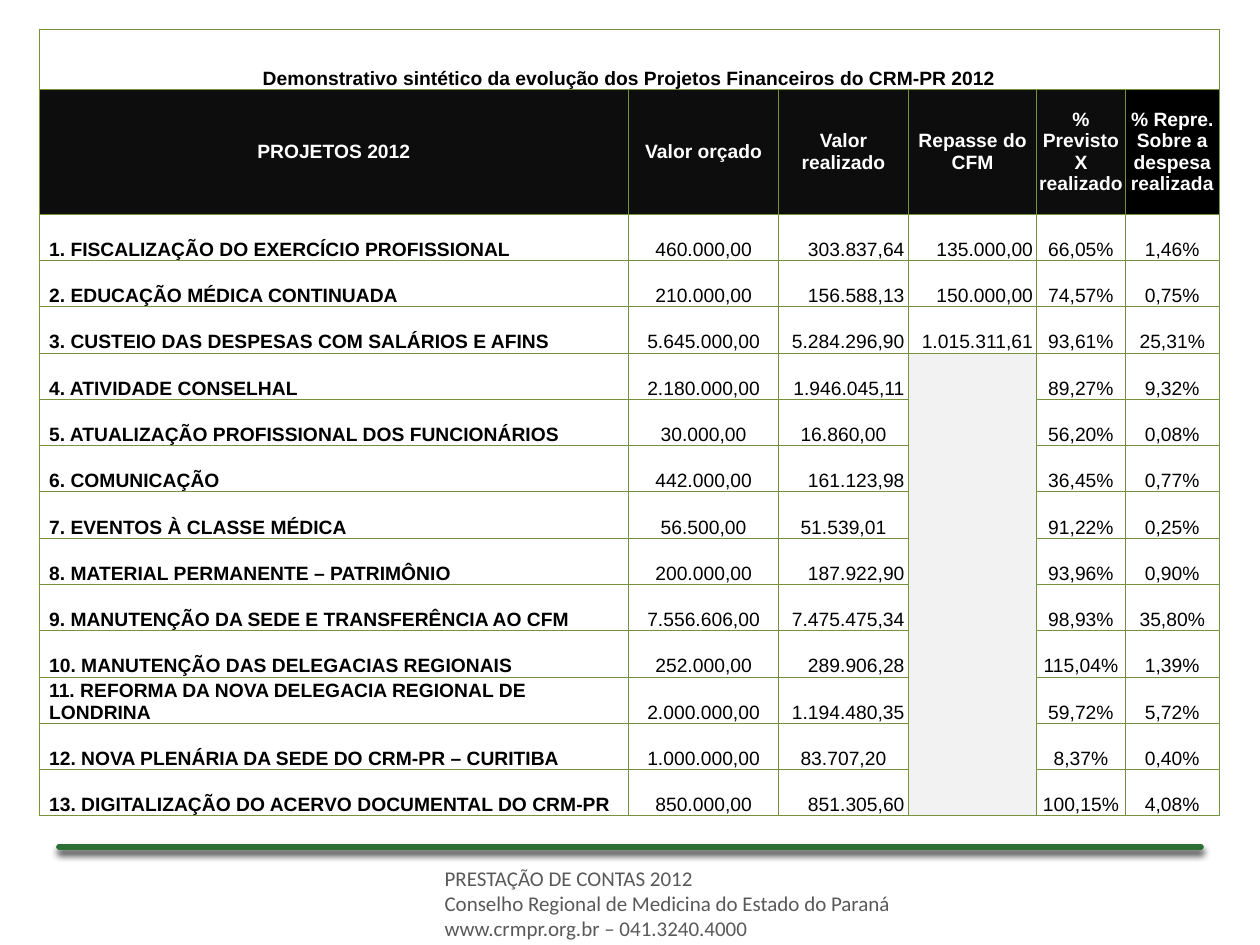
from lxml.etree import SubElement
from pptx import Presentation
from pptx.dml.color import RGBColor
from pptx.enum.shapes import MSO_CONNECTOR
from pptx.enum.text import MSO_ANCHOR, PP_ALIGN
from pptx.oxml.ns import qn
from pptx.util import Inches, Pt

BLACK = RGBColor(0x00, 0x00, 0x00)
WHITE = RGBColor(0xFF, 0xFF, 0xFF)
HEADER = RGBColor(0x0D, 0x0D, 0x0D)
EMPTY = RGBColor(0xF2, 0xF2, 0xF2)
BORDER = RGBColor(0x75, 0x92, 0x3C)
RULE = RGBColor(0x2C, 0x6E, 0x34)
GREY = RGBColor(0x59, 0x59, 0x59)

TITLE = "Demonstrativo sintético da evolução dos Projetos Financeiros do CRM-PR 2012"
HEADINGS = ["PROJETOS 2012", "Valor orçado", "Valor realizado", "Repasse do CFM",
            "% Previsto X realizado", "% Repre. Sobre a despesa realizada"]
PROJECTS = [
    ("1. FISCALIZAÇÃO DO EXERCÍCIO PROFISSIONAL", "460.000,00", "303.837,64", "135.000,00", "66,05%", "1,46%"),
    ("2. EDUCAÇÃO MÉDICA CONTINUADA", "210.000,00", "156.588,13", "150.000,00", "74,57%", "0,75%"),
    ("3. CUSTEIO DAS DESPESAS COM SALÁRIOS E AFINS", "5.645.000,00", "5.284.296,90", "1.015.311,61", "93,61%", "25,31%"),
    ("4. ATIVIDADE CONSELHAL", "2.180.000,00", "1.946.045,11", "", "89,27%", "9,32%"),
    ("5. ATUALIZAÇÃO PROFISSIONAL DOS FUNCIONÁRIOS", "30.000,00", "16.860,00", "", "56,20%", "0,08%"),
    ("6. COMUNICAÇÃO", "442.000,00", "161.123,98", "", "36,45%", "0,77%"),
    ("7. EVENTOS À CLASSE MÉDICA", "56.500,00", "51.539,01", "", "91,22%", "0,25%"),
    ("8. MATERIAL PERMANENTE – PATRIMÔNIO", "200.000,00", "187.922,90", "", "93,96%", "0,90%"),
    ("9. MANUTENÇÃO DA SEDE E TRANSFERÊNCIA AO CFM", "7.556.606,00", "7.475.475,34", "", "98,93%", "35,80%"),
    ("10. MANUTENÇÃO DAS DELEGACIAS REGIONAIS", "252.000,00", "289.906,28", "", "115,04%", "1,39%"),
    ("11. REFORMA DA NOVA DELEGACIA REGIONAL DE LONDRINA", "2.000.000,00", "1.194.480,35", "", "59,72%", "5,72%"),
    ("12. NOVA PLENÁRIA DA SEDE DO CRM-PR – CURITIBA", "1.000.000,00", "83.707,20", "", "8,37%", "0,40%"),
    ("13. DIGITALIZAÇÃO DO ACERVO DOCUMENTAL DO CRM-PR", "850.000,00", "851.305,60", "", "100,15%", "4,08%"),
]
COLUMN_WIDTHS = [4.68, 1.19, 1.03, 1.02, 0.7, 0.75]
TITLE_HEIGHT = Inches(0.48)
HEADING_HEIGHT = Inches(0.99)
TRANSFER_COLUMN = 3
FIRST_EMPTY_ROW = 5
FOOTER = ["PRESTAÇÃO DE CONTAS 2012",
          "Conselho Regional de Medicina do Estado do Paraná",
          "www.crmpr.org.br – 041.3240.4000"]


def set_values(target, values):
    for name, value in values.items():
        setattr(target, name, value)


def write(paragraph, text, size, font, color, bold=False):
    span = paragraph.add_run()
    span.text = text
    set_values(span.font, {"size": Pt(size), "name": font, "bold": bold})
    span.font.color.rgb = color


def add_borders(cell):
    properties = cell._tc.get_or_add_tcPr()
    for position, side in enumerate(("a:lnL", "a:lnR", "a:lnT", "a:lnB")):
        line = SubElement(properties, qn(side), w=str(Pt(0.5)))
        fill = SubElement(line, qn("a:solidFill"))
        SubElement(fill, qn("a:srgbClr"), val=str(BORDER))
        properties.insert(position, line)


def fill_cell(cell, text, fill=WHITE, color=BLACK, bold=False,
              align=PP_ALIGN.CENTER, anchor=MSO_ANCHOR.BOTTOM, left=0, right=0):
    set_values(cell, {"margin_left": Inches(left), "margin_right": Inches(right),
                      "margin_top": 0, "margin_bottom": 0, "vertical_anchor": anchor})
    cell.fill.solid()
    cell.fill.fore_color.rgb = fill
    add_borders(cell)
    paragraph = cell.text_frame.paragraphs[0]
    paragraph.alignment = align
    if text:
        write(paragraph, text, 11, "Arial", color, bold)


def project_format(column, text):
    if column == 0:
        return {"bold": True, "align": PP_ALIGN.LEFT, "left": 0.08}
    if column == TRANSFER_COLUMN and not text:
        return {"fill": EMPTY}
    if column in (2, TRANSFER_COLUMN) and len(text) >= len("000.000,00"):
        return {"align": PP_ALIGN.RIGHT, "right": 0.03}
    return {}


def add_project_table(page, left, top, width, height):
    row_count = len(PROJECTS) + 2
    table = page.shapes.add_table(row_count, len(HEADINGS), left, top, width, height).table
    set_values(table, {"first_row": False, "horz_banding": False})
    for column, column_width in zip(table.columns, COLUMN_WIDTHS):
        column.width = Inches(column_width)
    project_height = (height - TITLE_HEIGHT - HEADING_HEIGHT) // len(PROJECTS)
    heights = [TITLE_HEIGHT, HEADING_HEIGHT] + [project_height] * len(PROJECTS)
    for row, row_height in zip(table.rows, heights):
        row.height = row_height

    for column, heading in enumerate(HEADINGS):
        fill_cell(table.cell(0, column), "" if column else TITLE, bold=True)
        fill = BLACK if column == len(HEADINGS) - 1 else HEADER
        fill_cell(table.cell(1, column), heading, fill, WHITE, True, anchor=MSO_ANCHOR.MIDDLE)
    for row, project in enumerate(PROJECTS, start=2):
        for column, text in enumerate(project):
            fill_cell(table.cell(row, column), text, **project_format(column, text))

    table.cell(0, 0).merge(table.cell(0, len(HEADINGS) - 1))
    table.cell(FIRST_EMPTY_ROW, TRANSFER_COLUMN).merge(
        table.cell(row_count - 1, TRANSFER_COLUMN))


def add_rule(page, left, top, width):
    rule = page.shapes.add_connector(MSO_CONNECTOR.STRAIGHT, left, top, left + width, top)
    rule.line.color.rgb = RULE
    rule.line.width = Pt(3.5)
    rule.line._ln.set("cap", "rnd")
    effects = SubElement(rule._element.spPr, qn("a:effectLst"))
    shadow = SubElement(effects, qn("a:outerShdw"), blurRad=str(Pt(4)), dist=str(Pt(3)),
                        dir="5400000", rotWithShape="0")
    color = SubElement(shadow, qn("a:srgbClr"), val=str(BLACK))
    SubElement(color, qn("a:alpha"), val="73000")


def add_footer(page, left, top, width, height):
    frame = page.shapes.add_textbox(left, top, width, height).text_frame
    frame.word_wrap = True
    for index, text in enumerate(FOOTER):
        paragraph = frame.add_paragraph() if index else frame.paragraphs[0]
        write(paragraph, text, 12, "Calibri", GREY)


def main():
    deck = Presentation()
    set_values(deck, {"slide_width": Inches(10), "slide_height": Inches(7.5)})
    page = deck.slides.add_slide(deck.slide_layouts[6])
    add_footer(page, Inches(3.43), Inches(6.82), Inches(4.88), Inches(0.71))
    add_rule(page, Inches(0.47), Inches(6.72), Inches(9.06))
    add_project_table(page, Inches(0.31), Inches(0.23), Inches(9.37), Inches(6.25))
    deck.save("out.pptx")


if __name__ == "__main__":
    main()
